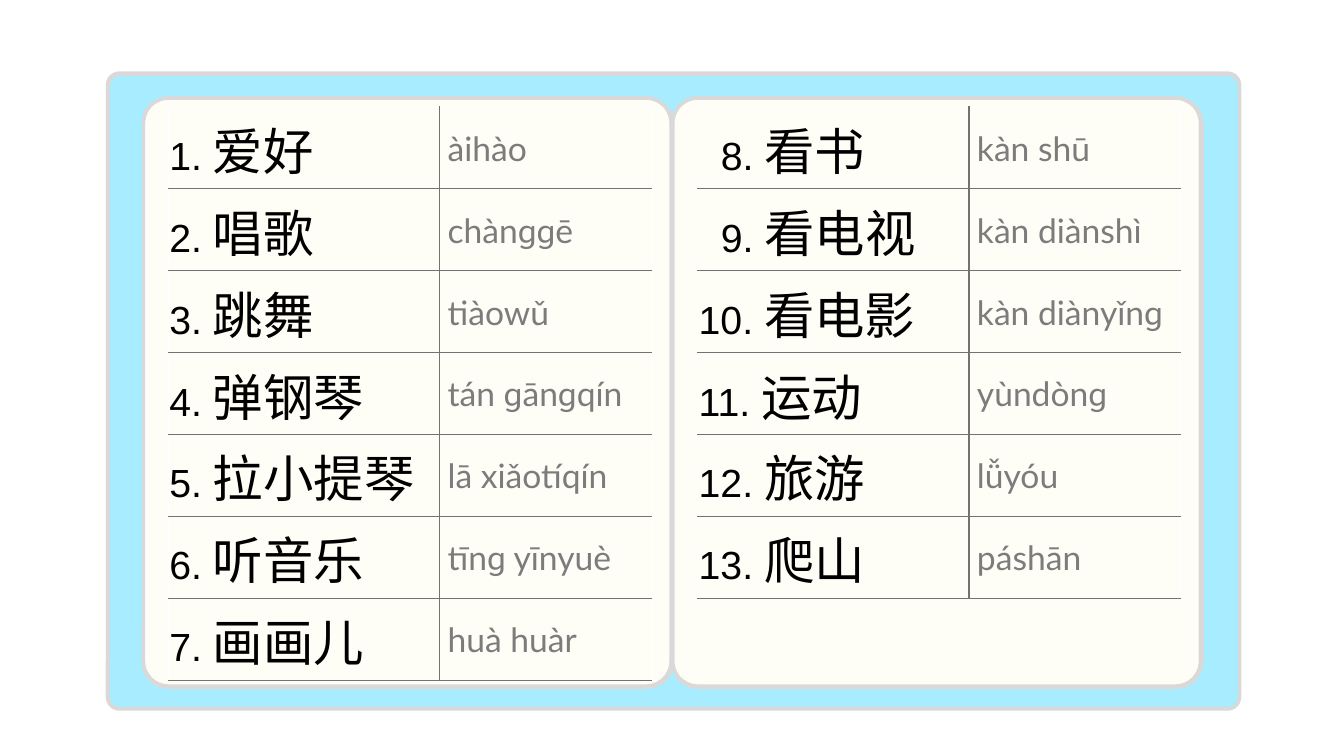
import dataclasses

import pptx
import pptx.dml.color
import pptx.enum.shapes
import pptx.enum.text
import pptx.oxml
import pptx.oxml.ns
import pptx.util

Inches = pptx.util.Inches

LEFT_WORDS = [
    ("爱好", "àihào"),
    ("唱歌", "chànɡɡē"),
    ("跳舞", "tiàowǔ"),
    ("弹钢琴", "tán ɡānɡqín"),
    ("拉小提琴", "lā xiǎotíqín"),
    ("听音乐", "tīnɡ yīnyuè"),
    ("画画儿", "huà huàr"),
]
RIGHT_WORDS = [
    ("看书", "kàn shū"),
    ("看电视", "kàn diànshì"),
    ("看电影", "kàn diànyǐnɡ"),
    ("运动", "yùndònɡ"),
    ("旅游", "lǚyóu"),
    ("爬山", "páshān"),
]
PANEL_LEFT, PANEL_STEP = 1.42, 5.25
TABLE_INSET = 0.25
COLUMN_WIDTHS = (2.69, 2.1)
ROW_HEIGHT = 5.69 / 7
CELL_MARGIN, PINYIN_MARGIN, DIGIT_INDENT = 0.01, 0.08, 0.22


@dataclasses.dataclass(frozen=True)
class Theme:
    frame: str = "A8EDFF"
    panel: str = "FFFEF6"
    outline: str = "D9D9D9"
    rule: str = "767171"
    hidden_rule: str = "FFFFFF"
    word: str = "000000"
    pinyin: str = "7C7C7C"
    number_font: str = "Arial"
    word_font: str = "Noto Sans CJK SC"
    pinyin_font: str = "Lato"
    number_size: int = 28
    word_size: int = 36
    pinyin_size: int = 24
    outline_width: int = 3
    rule_width: int = 1


class VocabularySlide:
    """Draws vocabulary panels and tables on one slide in a shared style."""

    def __init__(self, presentation, theme):
        self.theme = theme
        self.slide = presentation.slides.add_slide(presentation.slide_layouts[6])

    def card(self, left, top, width, height, rounding, fill):
        shape = self.slide.shapes.add_shape(
            pptx.enum.shapes.MSO_SHAPE.ROUNDED_RECTANGLE,
            Inches(left), Inches(top), Inches(width), Inches(height))
        shape.adjustments[0] = rounding
        shape.shadow.inherit = False
        shape.fill.solid()
        shape.fill.fore_color.rgb = pptx.dml.color.RGBColor.from_string(fill)
        shape.line.color.rgb = pptx.dml.color.RGBColor.from_string(self.theme.outline)
        shape.line.width = pptx.util.Pt(self.theme.outline_width)

    def style_font(self, font, name, size, color):
        font.name = name
        font.size = pptx.util.Pt(size)
        font.color.rgb = pptx.dml.color.RGBColor.from_string(color)

    def run(self, paragraph, text, name, size, color):
        run = paragraph.add_run()
        run.text = text
        self.style_font(run.font, name, size, color)
        east_asian = pptx.oxml.parse_xml(
            f'<a:ea {pptx.oxml.ns.nsdecls("a")} typeface="{name}"/>')
        run.font._element.append(east_asian)

    def format_cell(self, cell, left_margin, borders):
        cell.vertical_anchor = pptx.enum.text.MSO_ANCHOR.MIDDLE
        cell.margin_left = Inches(left_margin)
        cell.margin_right = cell.margin_top = Inches(CELL_MARGIN)
        cell.margin_bottom = 0
        properties = cell._tc.get_or_add_tcPr()
        width = pptx.util.Pt(self.theme.rule_width)
        for side, color in zip("LRTB", borders):
            properties.append(pptx.oxml.parse_xml(
                f'<a:ln{side} {pptx.oxml.ns.nsdecls("a")} w="{width}">'
                f'<a:solidFill><a:srgbClr val="{color}"/></a:solidFill></a:ln{side}>'))
        cell.fill.background()

    def word_table(self, left, top, words, first_number):
        theme = self.theme
        table = self.slide.shapes.add_table(
            len(words), len(COLUMN_WIDTHS), Inches(left), Inches(top),
            Inches(sum(COLUMN_WIDTHS)), Inches(ROW_HEIGHT * len(words))).table
        table.first_row = table.horz_banding = False
        for column, width in zip(table.columns, COLUMN_WIDTHS):
            column.width = Inches(width)
        digits = len(str(first_number + len(words) - 1))
        for index, (word, pinyin) in enumerate(words):
            table.rows[index].height = Inches(ROW_HEIGHT)
            number = first_number + index
            upper = theme.rule if index else theme.hidden_rule
            word_cell, pinyin_cell = table.cell(index, 0), table.cell(index, 1)

            indent = DIGIT_INDENT * (digits - len(str(number)))
            self.format_cell(word_cell, CELL_MARGIN + indent,
                             (theme.hidden_rule, theme.rule, upper, theme.rule))
            paragraph = word_cell.text_frame.paragraphs[0]
            self.run(paragraph, f"{number}. ", theme.number_font, theme.number_size, theme.word)
            self.run(paragraph, word, theme.word_font, theme.word_size, theme.word)

            self.format_cell(pinyin_cell, PINYIN_MARGIN,
                             (theme.rule, theme.hidden_rule, upper, theme.rule))
            paragraph = pinyin_cell.text_frame.paragraphs[0]
            paragraph.text = pinyin
            self.style_font(paragraph.font, theme.pinyin_font, theme.pinyin_size, theme.pinyin)


def main():
    presentation = pptx.Presentation()
    presentation.slide_width = Inches(13.33)
    presentation.slide_height = Inches(7.5)
    theme = Theme()
    page = VocabularySlide(presentation, theme)

    page.card(1.07, 0.73, 11.22, 6.3, 0.018, theme.frame)
    panel_lefts = [PANEL_LEFT + PANEL_STEP * index for index in range(2)]
    for left in panel_lefts:
        page.card(left, 0.97, 5.24, 5.84, 0.048, theme.panel)

    first_number = 1
    for left, words in zip(panel_lefts, (LEFT_WORDS, RIGHT_WORDS)):
        page.word_table(left + TABLE_INSET, 1.06, words, first_number)
        first_number += len(words)

    presentation.save("out.pptx")


if __name__ == "__main__":
    main()
